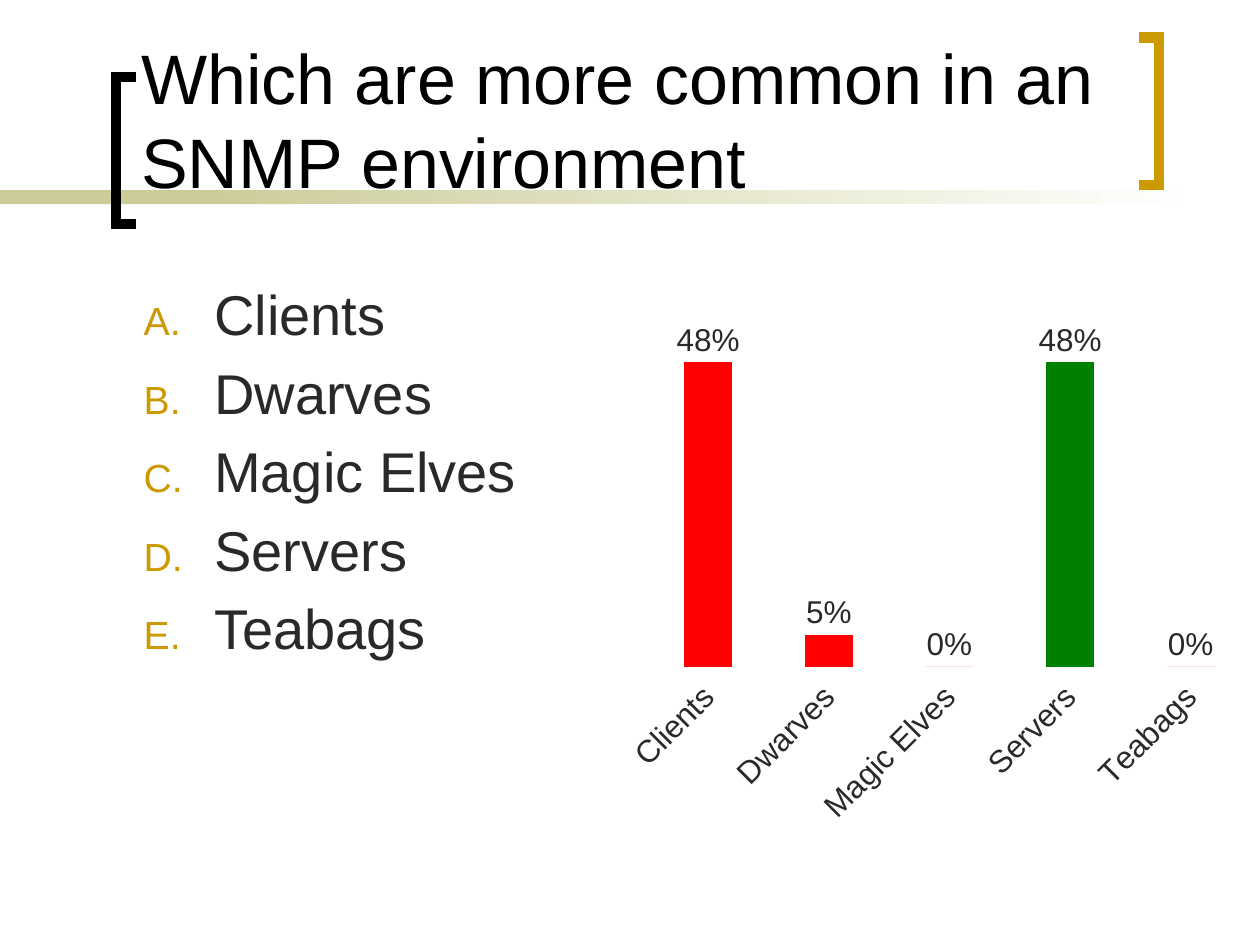
from dataclasses import dataclass

from pptx import Presentation
from pptx.chart.data import CategoryChartData
from pptx.dml.color import RGBColor
from pptx.enum import chart as ch, shapes, text
from pptx.oxml import parse_xml
from pptx.oxml.ns import nsdecls
from pptx.util import Inches, Pt


@dataclass(frozen=True)
class Theme:
    font: str = "Arial"
    black: RGBColor = RGBColor(0, 0, 0)
    body: RGBColor = RGBColor(0x29, 0x29, 0x29)
    gold: RGBColor = RGBColor(0xCC, 0x99, 0x00)
    sand: RGBColor = RGBColor(0xCC, 0xCC, 0x99)
    white: RGBColor = RGBColor(0xFF, 0xFF, 0xFF)
    wrong: RGBColor = RGBColor(0xFF, 0, 0)
    right: RGBColor = RGBColor(0, 0x80, 0)
    title_size: int = 40
    body_size: int = 32
    chart_size: int = 18


THEME = Theme()
TITLE = "Which are more common in an SNMP environment"
VOTES = {"Clients": 0.48, "Dwarves": 0.05, "Magic Elves": 0,
         "Servers": 0.48, "Teabags": 0}
ANSWER = "Servers"


def box(*inches):
    return [Inches(v) for v in inches]


def style_font(font, size, color):
    font.name, font.size = THEME.font, Pt(size)
    font.color.rgb = color


def add_band(s, left, width, fade=False):
    sp = s.shapes.add_shape(shapes.MSO_SHAPE.RECTANGLE,
                            *box(left, 1.51, width, 0.11))
    sp.shadow.inherit = False
    sp.line.fill.background()
    if fade:
        sp.fill.gradient()
        sp.fill.gradient_angle = 0
        for stop, color in zip(sp.fill.gradient_stops, (THEME.sand, THEME.white)):
            stop.color.rgb = color
    else:
        sp.fill.solid()
        sp.fill.fore_color.rgb = THEME.sand


def add_bracket(s, tip, spine, top, color):
    """Square bracket whose ends lie at x = tip and whose upright is at x = spine."""
    bottom = top + 1.17
    fb = s.shapes.build_freeform(Inches(tip), Inches(top))
    fb.add_line_segments([box(spine, top), box(spine, bottom), box(tip, bottom)],
                         close=False)
    sp = fb.convert_to_shape()
    sp.shadow.inherit = False
    sp.fill.background()
    sp.line.color.rgb = color
    sp.line.width = Pt(6)
    sp.line._get_or_add_ln().append(
        parse_xml(f'<a:miter {nsdecls("a")} lim="800000"/>'))


def place(sp, *inches):
    """Position a placeholder and bring it to the front."""
    sp.left, sp.top, sp.width, sp.height = box(*inches)
    sp.element.getparent().append(sp.element)
    tf = sp.text_frame
    tf.word_wrap = True
    tf.auto_size = text.MSO_AUTO_SIZE.NONE
    return tf


def add_run(p, words, size, color):
    p.alignment = text.PP_ALIGN.LEFT
    r = p.add_run()
    r.text = words
    style_font(r.font, size, color)


def fill_title(s):
    tf = place(s.shapes.title, 1.02, 0.11, 7.83, 1.55)
    tf.vertical_anchor = text.MSO_ANCHOR.BOTTOM
    add_run(tf.paragraphs[0], TITLE, THEME.title_size, THEME.black)


def letter_bullet(p):
    pPr = p._p.get_or_add_pPr()
    pPr.set("marL", str(Inches(0.56)))
    pPr.set("indent", str(Inches(-0.56)))
    for xml in (f'<a:buClr {nsdecls("a")}><a:srgbClr val="{THEME.gold}"/></a:buClr>',
                f'<a:buSzPct {nsdecls("a")} val="70000"/>',
                f'<a:buFont {nsdecls("a")} typeface="{THEME.font}"/>',
                f'<a:buAutoNum {nsdecls("a")} type="alphaUcPeriod"/>'):
        pPr.append(parse_xml(xml))


def fill_answers(s):
    tf = place(s.placeholders[1], 1.04, 2.17, 3.96, 4.5)
    for i, answer in enumerate(VOTES):
        p = tf.add_paragraph() if i else tf.paragraphs[0]
        add_run(p, answer, THEME.body_size, THEME.body)
        letter_bullet(p)


def set_plot_layout(chart, x, y, w, h):
    area = chart._chartSpace.chart.plotArea
    for old in area.findall("{*}layout"):
        area.remove(old)
    area.insert(0, parse_xml(
        f'<c:layout {nsdecls("c")}><c:manualLayout>'
        '<c:layoutTarget val="outer"/><c:xMode val="edge"/><c:yMode val="edge"/>'
        f'<c:x val="{x}"/><c:y val="{y}"/><c:w val="{w}"/><c:h val="{h}"/>'
        '</c:manualLayout></c:layout>'))


def add_votes_chart(s):
    data = CategoryChartData(number_format="0%")
    data.categories = list(VOTES)
    data.add_series("Series 1", list(VOTES.values()))
    chart = s.shapes.add_chart(ch.XL_CHART_TYPE.COLUMN_CLUSTERED,
                               *box(4.93, 1.88, 5, 5.62), data).chart
    chart.has_legend = chart.has_title = False
    style_font(chart.font, THEME.chart_size, THEME.body)
    set_plot_layout(chart, 0.01, 0.07, 0.99, 0.76)

    # Axes
    cat, val = chart.category_axis, chart.value_axis
    for axis in (cat, val):
        axis.has_major_gridlines = False
        axis.format.line.fill.background()
    style_font(cat.tick_labels.font, THEME.chart_size, THEME.body)
    cat._element.txPr.find("{*}bodyPr").set("rot", "-2700000")
    val.minimum_scale, val.maximum_scale = 0, 0.6
    val.tick_label_position = ch.XL_TICK_LABEL_POSITION.NONE

    # Columns and their labels
    plot = chart.plots[0]
    plot.gap_width = 150
    plot.vary_by_categories = False
    series = plot.series[0]
    for i, answer in enumerate(VOTES):
        fill = series.points[i].format.fill
        fill.solid()
        fill.fore_color.rgb = THEME.right if answer == ANSWER else THEME.wrong
    labels = series.data_labels
    labels.show_value = True
    labels.number_format, labels.number_format_is_linked = "0%", False
    labels.position = ch.XL_LABEL_POSITION.OUTSIDE_END
    style_font(labels.font, THEME.chart_size, THEME.body)


def main():
    prs = Presentation()
    prs.slide_width, prs.slide_height = box(10, 7.5)
    s = prs.slides.add_slide(prs.slide_layouts[1])

    # Decoration behind the title
    add_band(s, 0, 2.33)
    add_band(s, 1.58, 7.92, fade=True)
    add_bracket(s, 1.08, 0.92, 0.61, THEME.black)
    add_bracket(s, 9.04, 9.2, 0.3, THEME.gold)

    # Content
    add_votes_chart(s)
    fill_title(s)
    fill_answers(s)
    prs.save("out.pptx")


if __name__ == "__main__":
    main()
